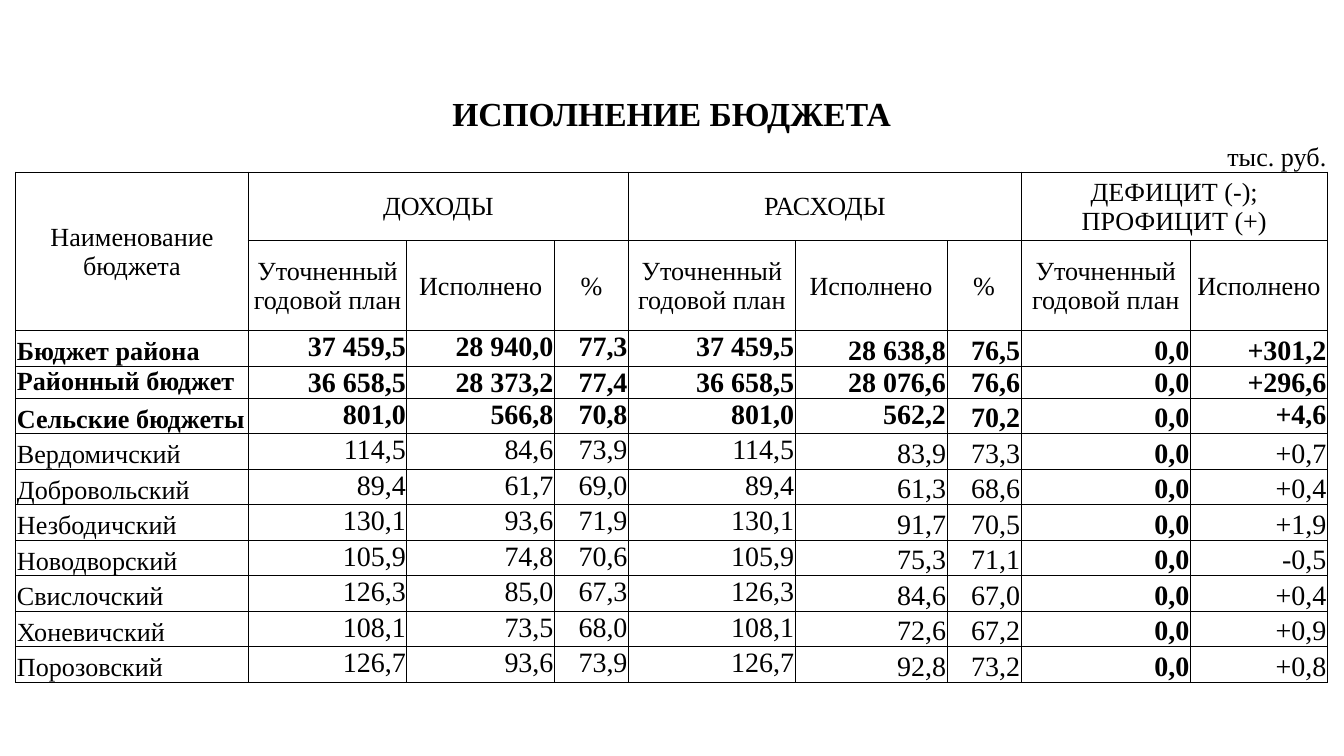
import pptx
import pptx.dml.color
import pptx.enum.text
import pptx.oxml
import pptx.oxml.ns
import pptx.util

Cm = pptx.util.Cm
Pt = pptx.util.Pt
ALIGN = pptx.enum.text.PP_ALIGN
ANCHOR = pptx.enum.text.MSO_ANCHOR

FONT = "Times New Roman"
BLACK = "000000"
COLUMN_WIDTHS = [4.39, 2.57, 0.43, 1.85, 0.94, 1.4, 3.15, 2.29, 0.58, 1.4, 3.2, 0.3, 2.29]
HEADER_HEIGHTS = [0.84, 0.66, 1.3, 1.7]
BODY_HEIGHTS = [0.67, 0.58] + [0.67] * 8
FIELD_SPANS = [1, 2, 2, 1, 1, 2, 1, 1, 2]

TITLE = "ИСПОЛНЕНИЕ БЮДЖЕТА"
UNIT = "тыс. руб."
UNIT_ROW_MERGES = [2, 4, 8, 10]
NAME_HEADING = "Наименование бюджета"
GROUPS = [("ДОХОДЫ", 5), ("РАСХОДЫ", 4), ("ДЕФИЦИТ (-); ПРОФИЦИТ (+)", 3)]
PLAN, DONE = "Уточненный годовой план", "Исполнено"
FIELD_HEADINGS = [PLAN, DONE, "%", PLAN, DONE, "%", PLAN, DONE]
BUDGETS = [
    ("Бюджет района", "37 459,5", "28 940,0", "77,3", "37 459,5", "28 638,8", "76,5", "0,0", "+301,2"),
    ("Районный бюджет", "36 658,5", "28 373,2", "77,4", "36 658,5", "28 076,6", "76,6", "0,0", "+296,6"),
    ("Сельские бюджеты", "801,0", "566,8", "70,8", "801,0", "562,2", "70,2", "0,0", "+4,6"),
    ("Вердомичский", "114,5", "84,6", "73,9", "114,5", "83,9", "73,3", "0,0", "+0,7"),
    ("Добровольский", "89,4", "61,7", "69,0", "89,4", "61,3", "68,6", "0,0", "+0,4"),
    ("Незбодичский", "130,1", "93,6", "71,9", "130,1", "91,7", "70,5", "0,0", "+1,9"),
    ("Новодворский", "105,9", "74,8", "70,6", "105,9", "75,3", "71,1", "0,0", "-0,5"),
    ("Свислочский", "126,3", "85,0", "67,3", "126,3", "84,6", "67,0", "0,0", "+0,4"),
    ("Хоневичский", "108,1", "73,5", "68,0", "108,1", "72,6", "67,2", "0,0", "+0,9"),
    ("Порозовский", "126,7", "93,6", "73,9", "126,7", "92,8", "73,2", "0,0", "+0,8"),
]
SUMMARY_ROWS = 3
BALANCE_PLAN_FIELD = 7
TOP_FIELDS = {1, 2, 3, 4}
TOP_CELLS = {(1, 0), (2, 5), (2, 8)}


def color(value):
    return pptx.dml.color.RGBColor.from_string(value)


def set_borders(cell, sides):
    properties = cell._tc.get_or_add_tcPr()
    for side in "LRTB":
        paint = f'<a:solidFill><a:srgbClr val="{BLACK}"/></a:solidFill>' if side in sides else "<a:noFill/>"
        properties.append(pptx.oxml.parse_xml(
            f'<a:ln{side} {pptx.oxml.ns.nsdecls("a")} w="6350">{paint}</a:ln{side}>'))


def prepare(cell, sides):
    set_borders(cell, sides)
    cell.fill.background()
    cell.margin_left = cell.margin_right = cell.margin_top = Cm(0.02)
    cell.margin_bottom = 0
    end = cell.text_frame.paragraphs[0]._p.get_or_add_endParaRPr()
    end.set("sz", "1200")


def write(cell, text, size=14, bold=False, align=ALIGN.CENTER, anchor=ANCHOR.MIDDLE):
    cell.vertical_anchor = anchor
    paragraph = cell.text_frame.paragraphs[0]
    paragraph.text = text
    paragraph.alignment = align
    paragraph.font.name = FONT
    paragraph.font.size = Pt(size)
    paragraph.font.bold = bold
    paragraph.font.color.rgb = color(BLACK)


def merge(table, row, column, columns=1, rows=1):
    cell = table.cell(row, column)
    if columns * rows > 1:
        cell.merge(table.cell(row + rows - 1, column + columns - 1))
    return cell


def field_cells(table, row, first=0):
    starts = [sum(FIELD_SPANS[:field]) for field in range(len(FIELD_SPANS))]
    return [merge(table, row, start, span)
            for start, span in list(zip(starts, FIELD_SPANS))[first:]]


def fill_header(table):
    last = len(COLUMN_WIDTHS) - 1
    write(merge(table, 0, 0, last + 1), TITLE, 18, True)
    for column in UNIT_ROW_MERGES:
        merge(table, 1, column, 2)
    write(table.cell(1, last), UNIT, align=ALIGN.RIGHT, anchor=ANCHOR.BOTTOM)
    write(merge(table, 2, 0, rows=2), NAME_HEADING)
    column = 1
    for heading, span in GROUPS:
        write(merge(table, 2, column, span), heading)
        column += span
    for cell, heading in zip(field_cells(table, 3, 1), FIELD_HEADINGS):
        write(cell, heading)


def fill_body(table):
    for index, budget in enumerate(BUDGETS):
        cells = field_cells(table, len(HEADER_HEIGHTS) + index)
        for field, (cell, text) in enumerate(zip(cells, budget)):
            at_top = field in TOP_FIELDS or (index, field) in TOP_CELLS
            write(cell, text,
                  size=15 if field else 14,
                  bold=index < SUMMARY_ROWS or field == BALANCE_PLAN_FIELD,
                  align=ALIGN.RIGHT if field else ALIGN.LEFT,
                  anchor=ANCHOR.TOP if at_top else ANCHOR.BOTTOM)


def main():
    presentation = pptx.Presentation()
    presentation.slide_width, presentation.slide_height = Cm(25.4), Cm(14.28)
    slide = presentation.slides.add_slide(presentation.slide_layouts[6])
    heights = HEADER_HEIGHTS + BODY_HEIGHTS
    table = slide.shapes.add_table(
        len(heights), len(COLUMN_WIDTHS), Cm(0.3), Cm(1.75),
        Cm(sum(COLUMN_WIDTHS)), Cm(sum(heights))).table
    table.first_row = table.horz_banding = False
    for column, width in zip(table.columns, COLUMN_WIDTHS):
        column.width = Cm(width)
    for index, (row, height) in enumerate(zip(table.rows, heights)):
        row.height = Cm(height)
        for cell in row.cells:
            prepare(cell, ["", "B"][index] if index < 2 else "LRTB")
    fill_header(table)
    fill_body(table)
    presentation.save("out.pptx")


if __name__ == "__main__":
    main()
